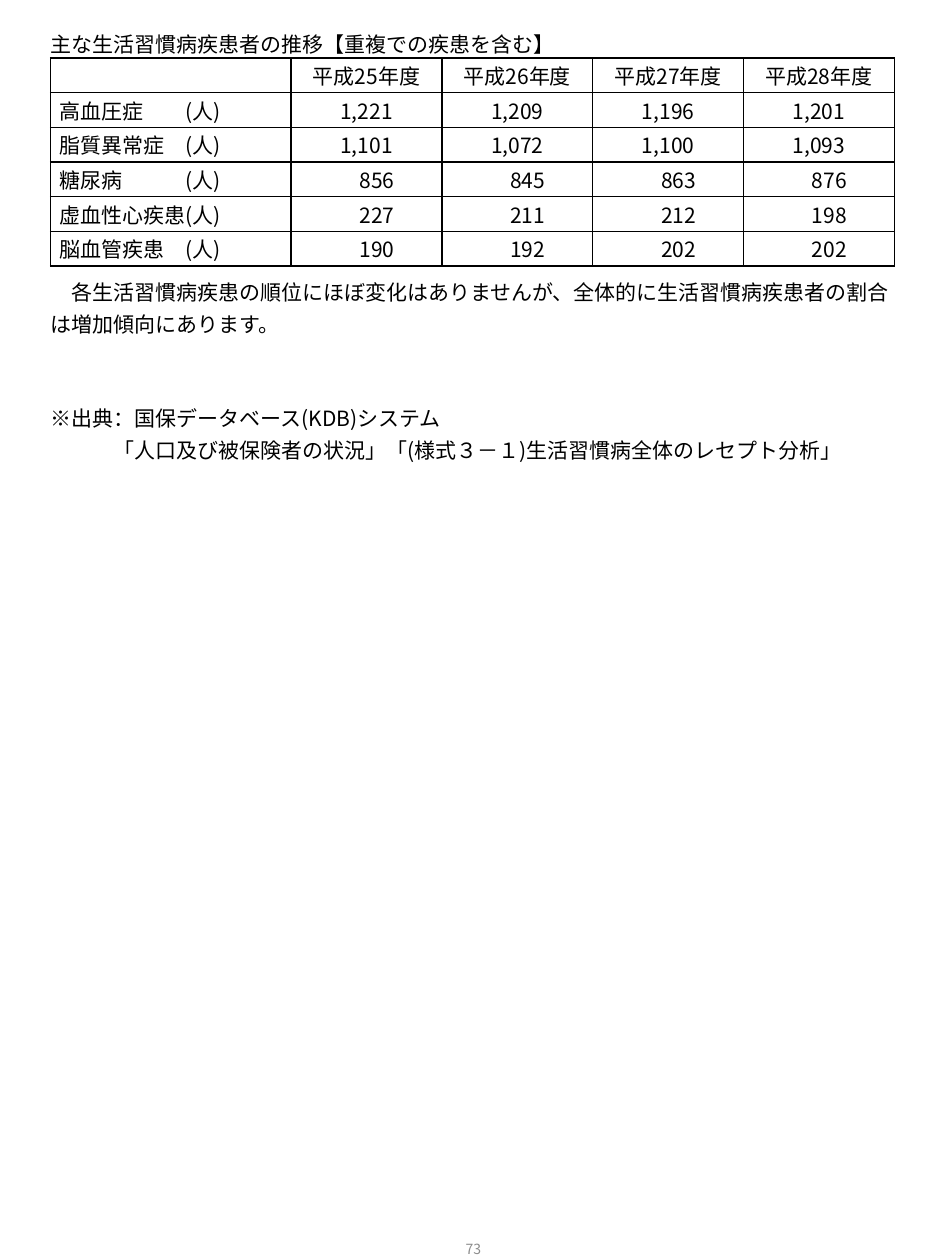
"""Build a one-page report on the trend in lifestyle-related disease patients."""
from lxml.etree import SubElement
from pptx import Presentation
from pptx.dml.color import RGBColor
from pptx.enum.text import MSO_ANCHOR, MSO_AUTO_SIZE, PP_ALIGN
from pptx.oxml.ns import qn
from pptx.util import Cm, Pt

FONT = "Noto Sans CJK JP"
BLACK = RGBColor(0x00, 0x00, 0x00)
GREY = RGBColor(0x8C, 0x8C, 0x8C)
LEFT, WIDTH = Cm(1.02), Cm(17)


def write(para, text, size=12, color=BLACK, align=PP_ALIGN.LEFT, spacing=1.0,
          before=0, margin=0, indent=0):
    para.alignment = align
    para.line_spacing = spacing
    para.space_before = Pt(before)
    properties = para._p.get_or_add_pPr()
    properties.set("marL", str(Pt(margin)))
    properties.set("indent", str(Pt(indent)))
    span = para.add_run()
    span.text = text
    span.font.size = Pt(size)
    span.font.name = FONT
    span.font.bold = False
    span.font.color.rgb = color
    SubElement(span._r.get_or_add_rPr(), qn("a:ea"), typeface=FONT)


def draw_borders(cell):
    properties = cell._tc.get_or_add_tcPr()
    for position, side in enumerate(("lnL", "lnR", "lnT", "lnB")):
        line = SubElement(properties, qn(f"a:{side}"), w=str(Pt(1)))
        fill = SubElement(line, qn("a:solidFill"))
        SubElement(fill, qn("a:srgbClr"), val=str(BLACK))
        properties.remove(line)
        properties.insert(position, line)


deck = Presentation()
deck.slide_width, deck.slide_height = Cm(19.05), Cm(25.4)
page = deck.slides.add_slide(deck.slide_layouts[5])

title = page.shapes.title
title.left, title.top, title.width, title.height = LEFT, Cm(0.38), WIDTH, Cm(0.74)
notes = page.shapes.add_textbox(LEFT, Cm(5.38), WIDTH, Cm(1.12))
number = page.shapes.add_textbox(Cm(7.32), Cm(24.51), Cm(4.45), Cm(1.35))

for box in (title, notes):
    frame = box.text_frame
    frame.word_wrap = True
    frame.auto_size = MSO_AUTO_SIZE.NONE
    frame.vertical_anchor = MSO_ANCHOR.TOP
    frame.margin_left = frame.margin_right = 0
    frame.margin_top = frame.margin_bottom = Cm(0.13)

write(title.text_frame.paragraphs[0], "主な生活習慣病疾患者の推移【重複での疾患を含む】", spacing=1.25)

write(notes.text_frame.paragraphs[0],
      "各生活習慣病疾患の順位にほぼ変化はありませんが、全体的に生活習慣病疾患者の割合は増加傾向にあります。",
      spacing=1.25, indent=12)
write(notes.text_frame.add_paragraph(), "※出典：国保データベース(KDB)システム",
      spacing=1.25, before=36)
write(notes.text_frame.add_paragraph(),
      "「人口及び被保険者の状況」「(様式３－１)生活習慣病全体のレセプト分析」",
      spacing=1.25, margin=36)

number.text_frame.word_wrap = True
number.text_frame.vertical_anchor = MSO_ANCHOR.MIDDLE
write(number.text_frame.paragraphs[0], "73", size=8, color=GREY, align=PP_ALIGN.CENTER)

records = [
    ("", "平成25年度", "平成26年度", "平成27年度", "平成28年度"),
    ("高血圧症\t(人)", "1,221", "1,209", "1,196", "1,201"),
    ("脂質異常症\t(人)", "1,101", "1,072", "1,100", "1,093"),
    ("糖尿病\t(人)", "856", "845", "863", "876"),
    ("虚血性心疾患(人)", "227", "211", "212", "198"),
    ("脳血管疾患\t(人)", "190", "192", "202", "202"),
]
table = page.shapes.add_table(len(records), len(records[0]), LEFT, Cm(1.17),
                              WIDTH, Cm(4.2)).table
table.first_row = table.horz_banding = False
for index, column in enumerate(table.columns):
    column.width = Cm(3.04) if index else Cm(4.85)
for row, record in zip(table.rows, records):
    row.height = Cm(0.7)
    for index, (cell, text) in enumerate(zip(row.cells, record)):
        cell.fill.background()
        cell.vertical_anchor = MSO_ANCHOR.MIDDLE
        cell.margin_left = cell.margin_right = Cm(0.18)
        cell.margin_top = cell.margin_bottom = 0
        draw_borders(cell)
        para = cell.text_frame.paragraphs[0]
        if not text:
            SubElement(para._p, qn("a:endParaRPr"), sz="1200")
        elif index:
            write(para, text, align=PP_ALIGN.CENTER, margin=12 if len(text) == 3 else 0)
        else:
            write(para, text)
            stops = SubElement(para._p.get_or_add_pPr(), qn("a:tabLst"))
            SubElement(stops, qn("a:tab"), pos=str(Cm(2.64)), algn="l")

deck.save("out.pptx")
